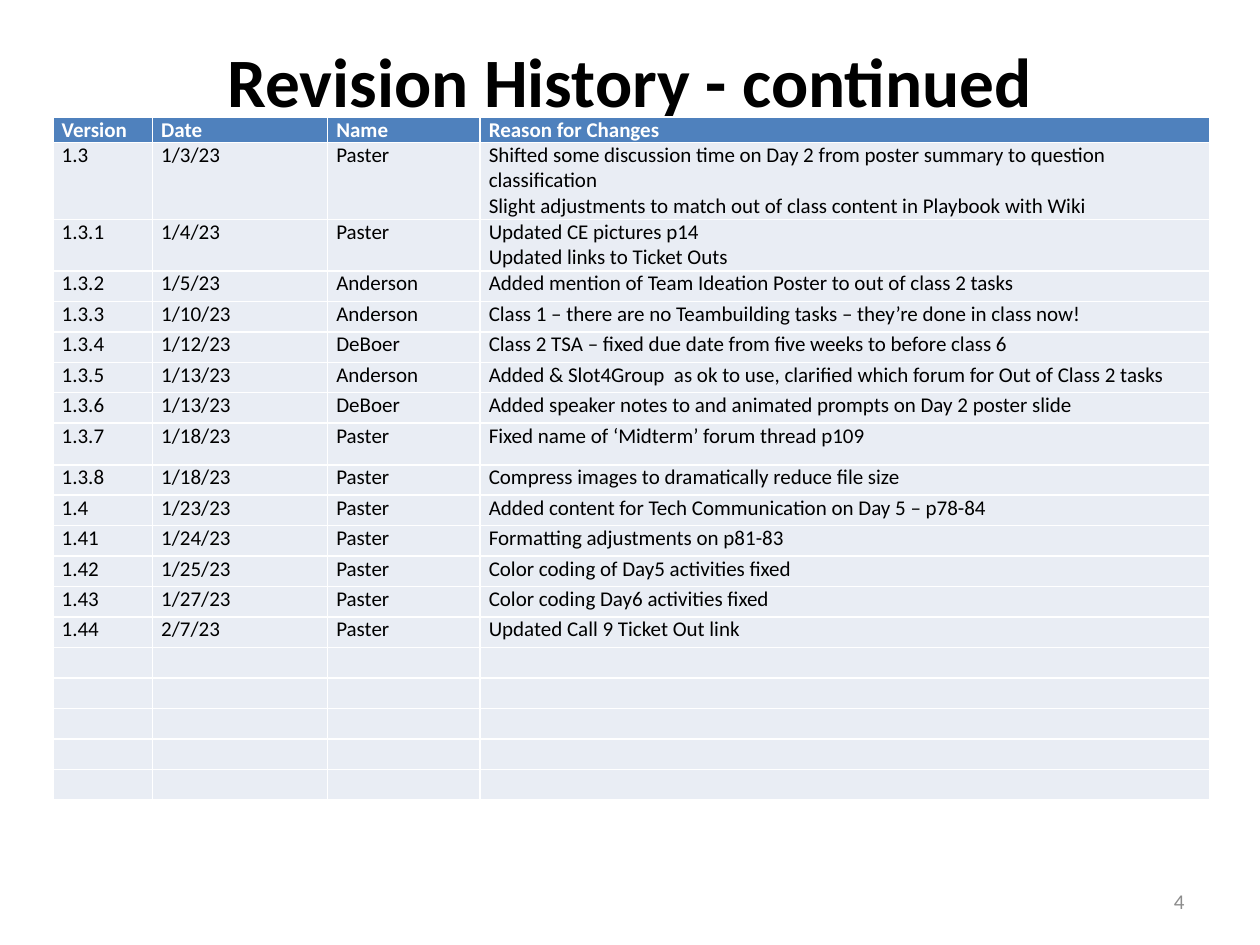
from lxml import etree
from pptx import Presentation
from pptx.dml.color import RGBColor
from pptx.enum.text import MSO_ANCHOR, PP_ALIGN
from pptx.oxml.ns import qn
from pptx.util import Inches, Pt

TOP, MIDDLE = MSO_ANCHOR.TOP, MSO_ANCHOR.MIDDLE
LEFT, CENTER, RIGHT = PP_ALIGN.LEFT, PP_ALIGN.CENTER, PP_ALIGN.RIGHT

COLORS = {"header": "4F81BD", "row": "E9EDF4", "white": "FFFFFF",
          "black": "000000", "number": "8C8C8C"}
FONT = "Calibri"
TABLE_SIZE = 12


def write(frame, text, size=TABLE_SIZE, color="black", bold=False, align=LEFT):
    """Write each line of text as one formatted paragraph."""
    for index, line in enumerate(text.split("\n")):
        para = frame.add_paragraph() if index else frame.paragraphs[0]
        para.alignment = align
        span = para.add_run()
        span.text = line
        span.font.name = FONT
        span.font.size = Pt(size)
        span.font.bold = bold
        span.font.color.rgb = RGBColor.from_string(COLORS[color])


def add_box(page, left, top, width, height, anchor):
    """Add a wrapping text box and return its text frame."""
    box = page.shapes.add_textbox(Inches(left), Inches(top), Inches(width), Inches(height))
    frame = box.text_frame
    frame.word_wrap = True
    frame.vertical_anchor = anchor
    return frame


deck = Presentation()
deck.slide_width, deck.slide_height = Inches(10), Inches(7.5)
page = deck.slides.add_slide(deck.slide_layouts[6])

# Title
title = add_box(page, 0.5, 0.3, 9, 1.25, TOP)
title.margin_top = 0
write(title, "Revision History - continued", size=39.6, bold=True, align=CENTER)

# Revision data
revisions = [
    ("Version", "Date", "Name", "Reason for Changes"),
    ("1.3", "1/3/23", "Paster",
     "Shifted some discussion time on Day 2 from poster summary to question classification\n"
     "Slight adjustments to match out of class content in Playbook with Wiki"),
    ("1.3.1", "1/4/23", "Paster", "Updated CE pictures p14\nUpdated links to Ticket Outs"),
    ("1.3.2", "1/5/23", "Anderson",
     "Added mention of Team Ideation Poster to out of class 2 tasks"),
    ("1.3.3", "1/10/23", "Anderson",
     "Class 1 – there are no Teambuilding tasks – they’re done in class now!"),
    ("1.3.4", "1/12/23", "DeBoer",
     "Class 2 TSA – fixed due date from five weeks to before class 6"),
    ("1.3.5", "1/13/23", "Anderson",
     "Added & Slot4Group  as ok to use, clarified which forum for Out of Class 2 tasks"),
    ("1.3.6", "1/13/23", "DeBoer",
     "Added speaker notes to and animated prompts on Day 2 poster slide"),
    ("1.3.7", "1/18/23", "Paster", "Fixed name of ‘Midterm’ forum thread p109"),
    ("1.3.8", "1/18/23", "Paster", "Compress images to dramatically reduce file size"),
    ("1.4", "1/23/23", "Paster", "Added content for Tech Communication on Day 5 – p78-84"),
    ("1.41", "1/24/23", "Paster", "Formatting adjustments on p81-83"),
    ("1.42", "1/25/23", "Paster", "Color coding of Day5 activities fixed"),
    ("1.43", "1/27/23", "Paster", "Color coding Day6 activities fixed"),
    ("1.44", "2/7/23", "Paster", "Updated Call 9 Ticket Out link"),
]
revisions += [("",) * 4] * 5  # rows left free for later entries

# Table grid: four special rows, the others share the remaining height
column_widths = [0.79, 1.39, 1.21, 5.79]
table_height = 5.42
special_heights = {0: 0.2, 1: 0.61, 2: 0.41, 8: 0.33}
regular_height = ((table_height - sum(special_heights.values()))
                  / (len(revisions) - len(special_heights)))
table = page.shapes.add_table(
    len(revisions), len(column_widths), Inches(0.42), Inches(0.93),
    Inches(sum(column_widths)), Inches(table_height)).table
table.horz_banding = False
for column, width in zip(table.columns, column_widths):
    column.width = Inches(width)

# Table cells
for row_index, revision in enumerate(revisions):
    header = row_index == 0
    row = table.rows[row_index]
    row.height = Inches(special_heights.get(row_index, regular_height))
    for cell, text in zip(row.cells, revision):
        cell.margin_left = cell.margin_right = Inches(0.07)
        cell.margin_top = cell.margin_bottom = 0
        cell.fill.solid()
        cell.fill.fore_color.rgb = RGBColor.from_string(COLORS["header" if header else "row"])
        if text:
            write(cell.text_frame, text, color="white" if header else "black", bold=header)
        else:
            # The end mark's size keeps an empty row from growing
            etree.SubElement(cell.text_frame.paragraphs[0]._p, qn("a:endParaRPr"),
                             sz=str(TABLE_SIZE * 100))

# Slide number
number = add_box(page, 7.17, 6.95, 2.33, 0.4, MIDDLE)
write(number, "4", color="number", align=RIGHT)

deck.save("out.pptx")
